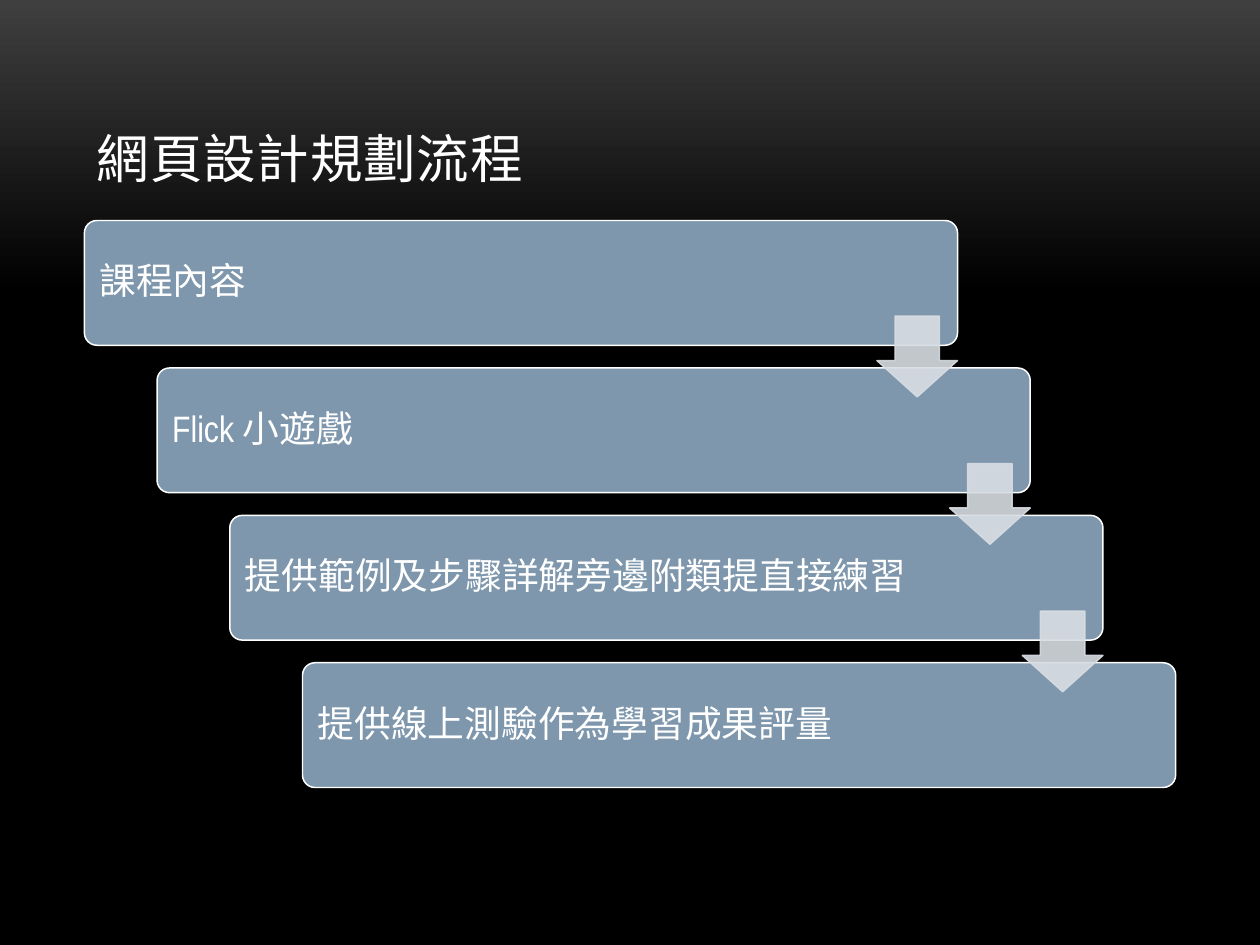
"""Web design planning flow: four stepped boxes joined by down arrows."""
from lxml import etree
from pptx import Presentation, util as u
from pptx.dml.color import RGBColor
from pptx.enum import shapes, text
from pptx.oxml.ns import qn

HUES = {"top": "3F3F3F", "base": "000000", "box": "7E97AD", "arrow": "D8DDE3", "ink": "FFFFFF"}
hue = {k: RGBColor.from_string(v) for k, v in HUES.items()}
steps = ["課程內容", "Flick 小遊戲", "提供範例及步驟詳解旁邊附類提直接練習", "提供線上測驗作為學習成果評量"]
left, top, wide, high = 0.67, 1.75, 6.93, 0.99
col, row, pad, tip = 0.577, 1.17, 0.03, 0.64

deck = Presentation()
deck.slide_width, deck.slide_height = u.Inches(10), u.Inches(7.5)
slide = deck.slides.add_slide(deck.slide_layouts[6])
fill = slide.background.fill
fill.gradient()
fill.gradient_angle = 270
for stop, name, pos in zip(fill.gradient_stops, ("top", "base"), (0, 0.31)):
    stop.color.rgb, stop.position = hue[name], pos


def draw(kind, box, name, edge, adj):
    shape = slide.shapes.add_shape(kind, *map(u.Inches, box))
    shape.shadow.inherit = False
    shape.fill.solid()
    shape.fill.fore_color.rgb = hue[name]
    shape.line.color.rgb, shape.line.width = hue[edge], u.Pt(0.85)
    for i, val in enumerate(adj):
        shape.adjustments[i] = val
    return shape


def write(words, box, size, anchor, inset):
    area = slide.shapes.add_textbox(*map(u.Inches, box))
    frame = area.text_frame
    form = {"word_wrap": True, "vertical_anchor": anchor,
            "margin_left": u.Inches(inset), "margin_right": u.Inches(inset)}
    for key, val in form.items():
        setattr(frame, key, val)
    para = frame.paragraphs[0]
    run = para.add_run()
    run.text = words
    for key, val in {"size": u.Pt(size), "name": "Arial Narrow"}.items():
        setattr(run.font, key, val)
    run.font.color.rgb = hue["ink"]
    return para


title = write("網頁設計規劃流程", (left, 0.3, 8.67, 1.25), 30, text.MSO_ANCHOR.BOTTOM, 0.1)
title.runs[0].font._element.set("spc", "50")

for i, words in enumerate(steps):
    x, y = left + i * col, top + i * row
    draw(shapes.MSO_SHAPE.ROUNDED_RECTANGLE, (x, y, wide, high), "box", "ink", [0.1])
    para = write(words, (x + pad, y + pad, 5.66, high - 2 * pad), 21, text.MSO_ANCHOR.MIDDLE, 0.09)
    para.line_spacing = 0.9

for i in range(len(steps) - 1):
    spot = (left + i * col + wide - tip, top + i * row + 0.76, tip, tip)
    arrow = draw(shapes.MSO_SHAPE.DOWN_ARROW, spot, "arrow", "arrow", [0.55, 0.45])
    for tint in arrow._element.spPr.iter(qn("a:srgbClr")):
        etree.SubElement(tint, qn("a:alpha"), val="90000")

deck.save("out.pptx")
